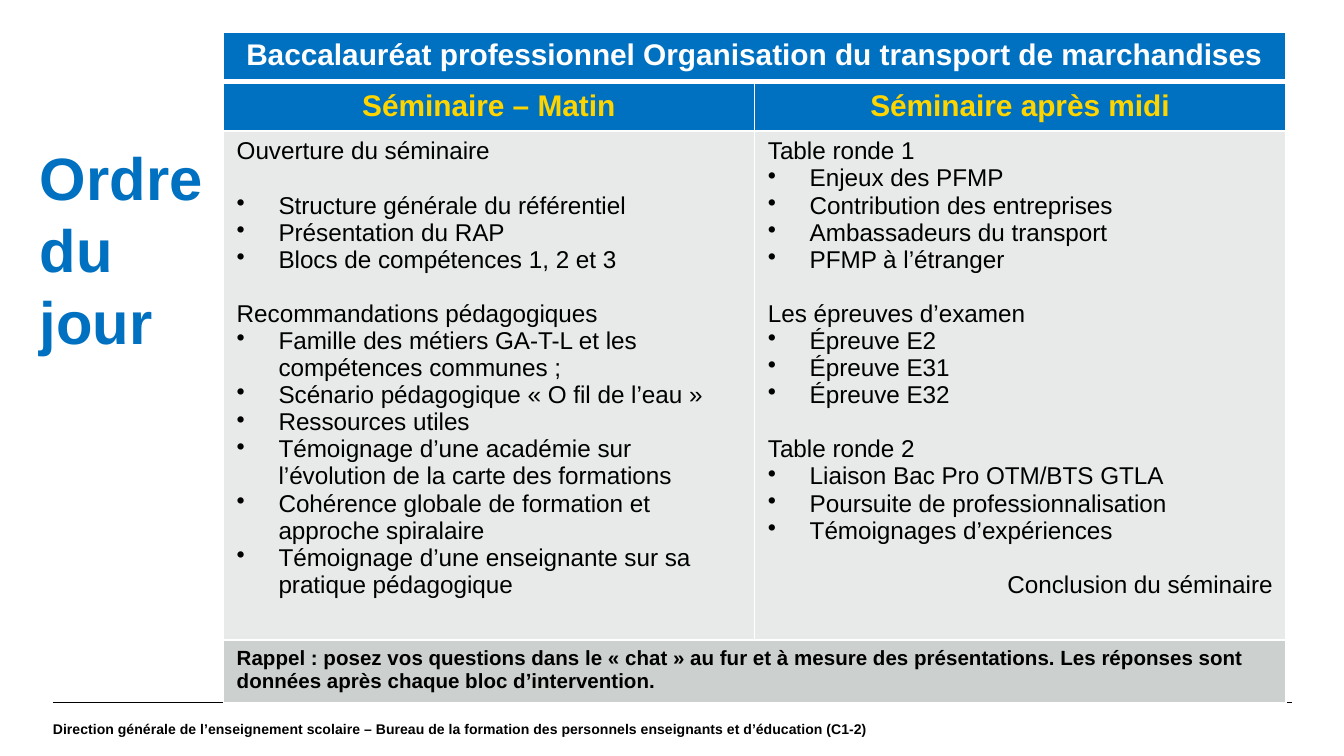
from lxml.etree import SubElement
from pptx import Presentation
from pptx.dml.color import RGBColor
from pptx.enum.shapes import MSO_CONNECTOR
from pptx.enum.text import MSO_ANCHOR, PP_ALIGN
from pptx.oxml import parse_xml
from pptx.oxml.ns import nsdecls, qn
from pptx.util import Cm, Pt

BLUE, YELLOW, WHITE, BLACK = "0070C0", "FFD500", "FFFFFF", "000000"
LIGHT_GREY, GREY = "E7EAE9", "CCD1CF"
BLANK_LINE = 14.5
INDENT = Cm(0.79)

TITLE = ["Ordre", "du", "jour"]
FOOTER = ("Direction générale de l’enseignement scolaire – Bureau de la formation "
          "des personnels enseignants et d’éducation (C1-2)")
HEADING = "Baccalauréat professionnel Organisation du transport de marchandises"
REMINDER = ("Rappel : posez vos questions dans le « chat » au fur et à mesure des "
            "présentations. Les réponses sont données après chaque bloc d’intervention.")
# Each session: heading and its groups of (topic, space under the topic, items)
SESSIONS = [
    ("Séminaire – Matin", [
        ("Ouverture du séminaire", BLANK_LINE, [
            "Structure générale du référentiel",
            "Présentation du RAP",
            "Blocs de compétences 1, 2 et 3"]),
        ("Recommandations pédagogiques", 0, [
            "Famille des métiers GA-T-L et les compétences communes ;",
            "Scénario pédagogique « O fil de l’eau »",
            "Ressources utiles",
            "Témoignage d’une académie sur l’évolution de la carte des formations",
            "Cohérence globale de formation et approche spiralaire",
            "Témoignage d’une enseignante sur sa pratique pédagogique"])]),
    ("Séminaire après midi", [
        ("Table ronde 1", 0, [
            "Enjeux des PFMP",
            "Contribution des entreprises",
            "Ambassadeurs du transport",
            "PFMP à l’étranger"]),
        ("Les épreuves d’examen", 0, ["Épreuve E2", "Épreuve E31", "Épreuve E32"]),
        ("Table ronde 2", 0, [
            "Liaison Bac Pro OTM/BTS GTLA",
            "Poursuite de professionnalisation",
            "Témoignages d’expériences"]),
        ("Conclusion du séminaire", 0, [])]),
]


def rgb(value):
    return RGBColor.from_string(value)


def add_text(frame, text, size, color, bold=False, align=PP_ALIGN.LEFT, before=0, bullet=False):
    """Fill the empty first paragraph, or add one below the others."""
    paragraph = frame.paragraphs[0]
    if paragraph.runs:
        paragraph = frame.add_paragraph()
    paragraph.add_run().text = text
    paragraph.alignment = align
    paragraph.space_before = Pt(before)
    if bullet:
        properties = paragraph._p.get_or_add_pPr()
        properties.set("marL", str(INDENT))
        properties.set("indent", str(-INDENT))
        SubElement(properties, qn("a:buChar"), char="•")
    font = paragraph.font
    font.name, font.size, font.bold = "Arial", Pt(size), bold
    font.color.rgb = rgb(color)


def style_cell(cell, fill, bottom_width=1):
    cell.fill.solid()
    cell.fill.fore_color.rgb = rgb(fill)
    properties = cell._tc.get_or_add_tcPr()
    for position, side in enumerate("LRTB"):
        width = Pt(bottom_width if side == "B" else 1)
        properties.insert(position, parse_xml(
            f'<a:ln{side} {nsdecls("a")} w="{width}"><a:solidFill>'
            f'<a:srgbClr val="{WHITE}"/></a:solidFill></a:ln{side}>'))


def add_footer(slide, left, top, width, height):
    # Rule above the footer
    rule = slide.shapes.add_connector(MSO_CONNECTOR.STRAIGHT, left, top, left + Cm(23.42), top)
    rule.line.color.rgb = rgb(BLACK)
    rule.line.width = Pt(0.8)
    SubElement(rule._element.spPr, qn("a:effectLst"))
    # Department name
    frame = slide.shapes.add_textbox(left, top, width, height).text_frame
    frame.word_wrap = True
    frame.vertical_anchor = MSO_ANCHOR.MIDDLE
    frame.margin_left = frame.margin_right = frame.margin_top = frame.margin_bottom = 0
    add_text(frame, FOOTER, 7.5, BLACK, bold=True)


def add_title(slide, left, top, width, height):
    title = slide.shapes.title
    title.left, title.top, title.width, title.height = left, top, width, height
    frame = title.text_frame
    frame.word_wrap = False
    frame.vertical_anchor = MSO_ANCHOR.TOP
    for line in TITLE:
        add_text(frame, line, 32, BLUE, bold=True)


def add_session(frame, groups):
    for index, (topic, gap, items) in enumerate(groups):
        align = PP_ALIGN.LEFT if items else PP_ALIGN.RIGHT
        add_text(frame, topic, 13, BLACK, align=align, before=BLANK_LINE if index else 0)
        for number, item in enumerate(items):
            add_text(frame, item, 13, BLACK, before=0 if number else gap, bullet=True)


def add_agenda(slide, left, top, width, height):
    table = slide.shapes.add_table(4, 2, left, top, width, height).table
    heading_height, reminder_height = Cm(0.94), Cm(1.18)
    body_height = height - 2 * heading_height - reminder_height
    for row, row_height in zip(table.rows, (heading_height, heading_height,
                                            body_height, reminder_height)):
        row.height = row_height
    # Fills and borders
    for row, fill in enumerate((BLUE, BLUE, LIGHT_GREY, GREY)):
        for column in range(2):
            style_cell(table.cell(row, column), fill, bottom_width=1 if row else 3)
    # Full-width rows
    for row in (0, 3):
        table.cell(row, 0).merge(table.cell(row, 1))
    add_text(table.cell(0, 0).text_frame, HEADING, 16, WHITE, True, PP_ALIGN.CENTER)
    add_text(table.cell(3, 0).text_frame, REMINDER, 11, BLACK, True)
    # One column per session
    for column, (name, groups) in enumerate(SESSIONS):
        header = table.cell(1, column)
        header.vertical_anchor = MSO_ANCHOR.MIDDLE
        add_text(header.text_frame, name, 16, YELLOW, True, PP_ALIGN.CENTER)
        add_session(table.cell(2, column).text_frame, groups)


def main():
    presentation = Presentation()
    presentation.slide_width, presentation.slide_height = Cm(25.4), Cm(14.29)
    slide = presentation.slides.add_slide(presentation.slide_layouts[5])
    add_footer(slide, Cm(1), Cm(13.28), Cm(23.7), Cm(1))
    add_title(slide, Cm(0.5), Cm(2.54), Cm(3.6), Cm(4.36))
    add_agenda(slide, Cm(4.22), Cm(0.6), Cm(20.08), Cm(12.68))
    presentation.save("out.pptx")


if __name__ == "__main__":
    main()
